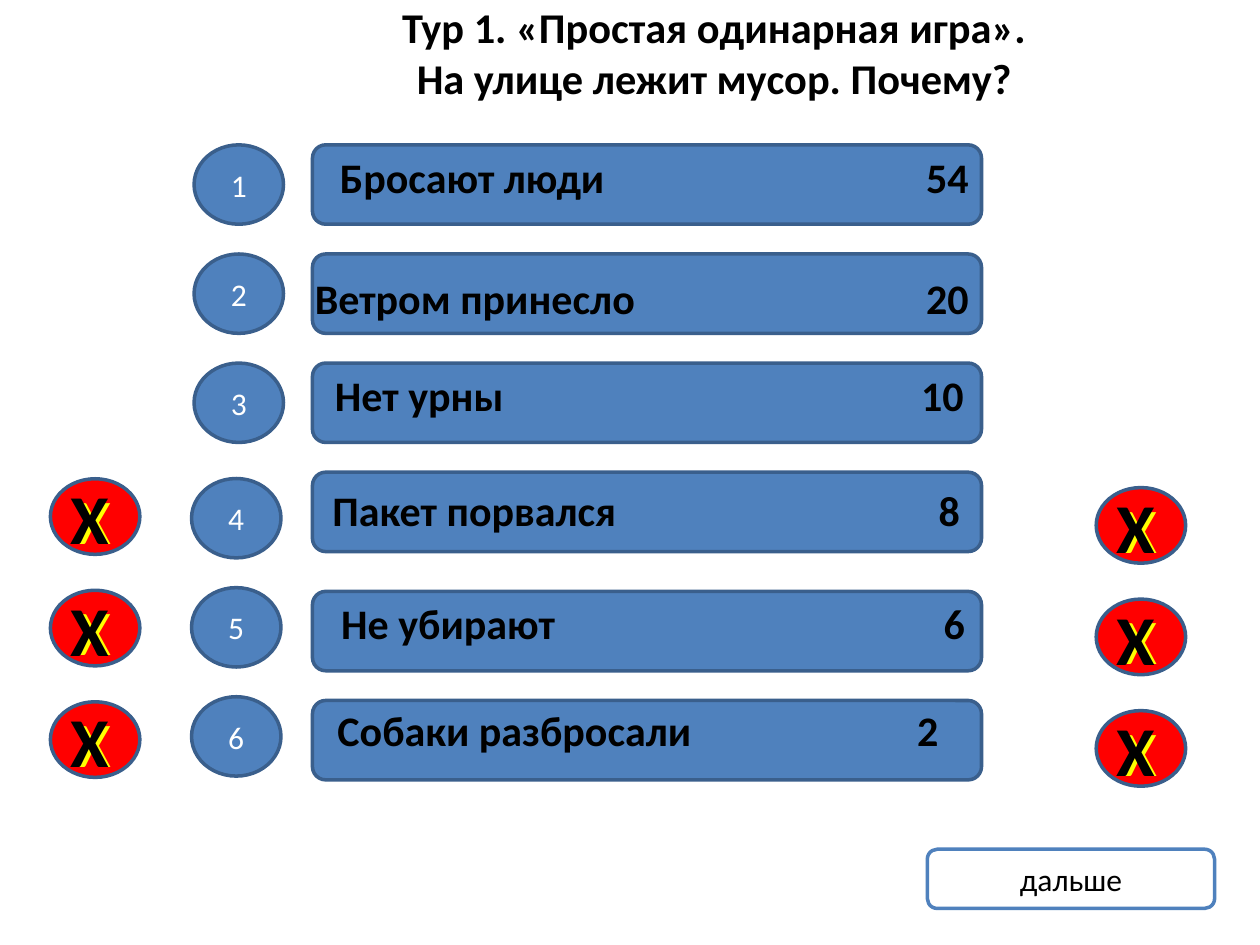
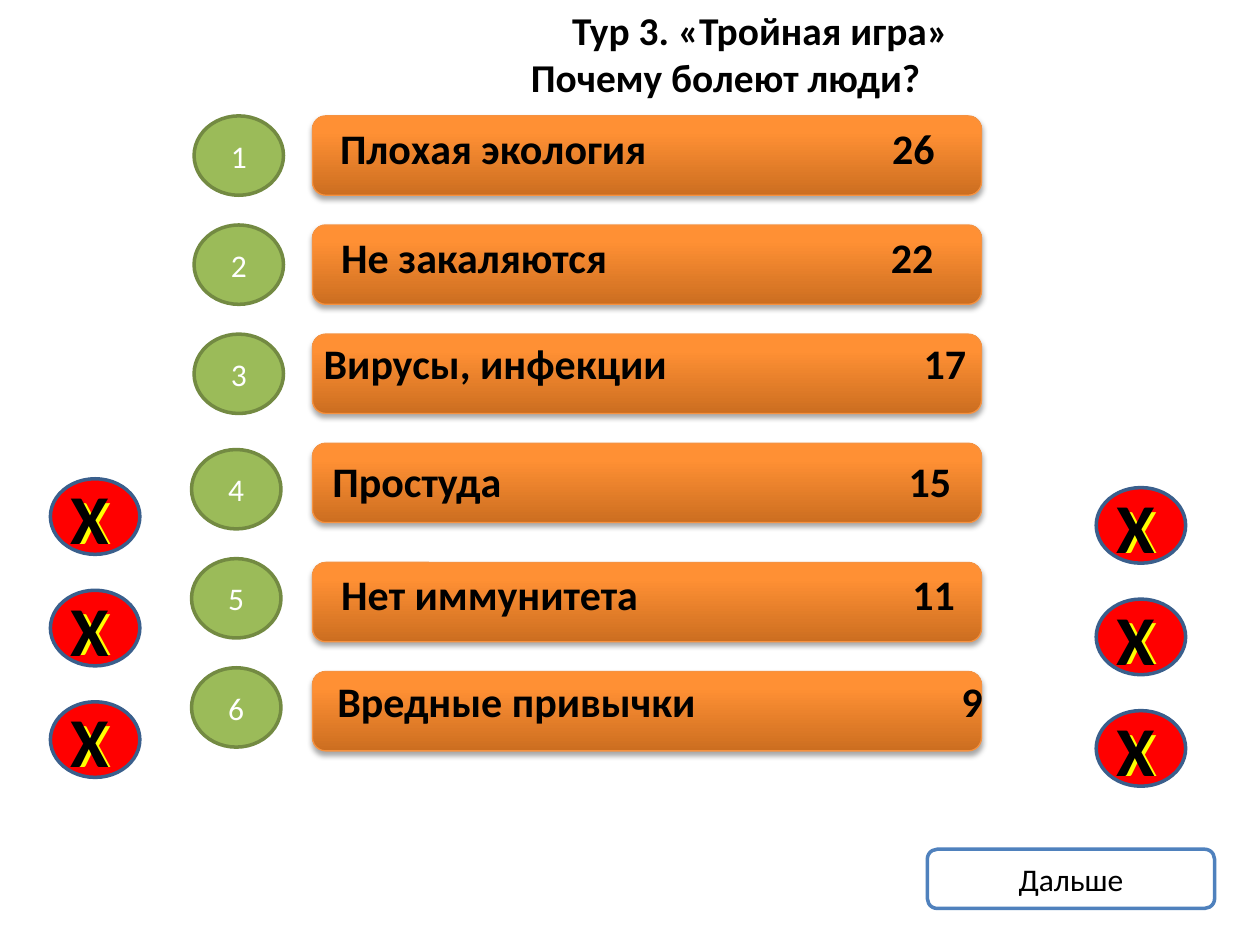
from copy import deepcopy
from dataclasses import dataclass

from lxml.etree import SubElement
from pptx import Presentation
from pptx.dml.color import RGBColor
from pptx.enum.shapes import MSO_SHAPE as Preset
from pptx.enum.text import MSO_ANCHOR as Anchor, PP_ALIGN as Align
from pptx.oxml.ns import qn
from pptx.util import Inches, Pt


@dataclass(frozen=True)
class Theme:
    font: str = "Calibri"
    black: str = "000000"
    white: str = "FFFFFF"
    blue: str = "4F81BD"
    blue_edge: str = "3A5F8C"
    green: str = "9BBB59"
    green_edge: str = "738A42"
    orange_edge: str = "F69240"
    orange_stops: tuple = ((0, "CC6E20"), (0.8, "FF9034"), (1, "FF9136"))
    red: str = "FF0000"
    yellow: str = "FFFF00"
    answer_size: float = 24
    label_size: float = 18
    cross_sizes: tuple = (36, 40)
    edge_width: float = 2
    thin_edge: float = 0.75


THEME = Theme()

# Each answer: wording, score, left of its box, drop below the bar top, right edge of the score
ROUNDS = [
    {
        "title": ["Тур 1. «Простая одинарная игра».", "На улице лежит мусор. Почему?"],
        "title_box": (1.53, 0, 8.28, 0.83),
        "title_size": 24.2,
        "title_indent": 0,
        "board_top": 1.15,
        "bar": (THEME.blue, THEME.blue_edge, THEME.edge_width),
        "number": (THEME.blue, THEME.blue_edge),
        "answers": [
            ("Бросают люди", 54, 2.6, 0, 7.69),
            ("Ветром принесло", 20, 2.4, 0.1, 7.69),
            ("Нет урны", 10, 2.56, 0, 7.65),
            ("Пакет порвался", 8, 2.54, 0.05, 7.62),
            ("Не убирают", 6, 2.61, 0, 7.66),
            ("Собаки разбросали", 2, 2.58, -0.02, 7.45),
        ],
        "next": "дальше",
    },
    {
        "title": ["Тур 3. «Тройная игра»", "Почему болеют люди?"],
        "title_box": (1.69, 0.08, 8.14, 0.68),
        "title_size": 22.5,
        "title_indent": 0.55,
        "board_top": 0.92,
        "bar": (THEME.orange_stops, THEME.orange_edge, THEME.thin_edge),
        "number": (THEME.green, THEME.green_edge),
        "answers": [
            ("Плохая экология", 26, 2.6, 0, 7.42),
            ("Не закаляются", 22, 2.61, 0, 7.41),
            ("Вирусы, инфекции", 17, 2.47, -0.02, 7.67),
            ("Простуда", 15, 2.54, 0.05, 7.55),
            ("Нет иммунитета", 11, 2.61, 0, 7.58),
            ("Вредные привычки", 9, 2.58, -0.02, 7.8),
        ],
        "next": "Дальше",
    },
]

ROW_PITCH = 0.866
ROW_HEIGHT = 0.63
BAR_LEFT, BAR_WIDTH = 2.48, 5.31
NUMBER_WIDTH = 0.71
INSET = 0.1
CROSS_PITCH = 0.885
CROSS_COUNT = 3
CROSS_STARTS = [(0.4, 3.8), (8.7, 3.87)]
NEXT_BOX = (7.36, 6.74, 2.28, 0.47)


def fill_gradient(shape, stops):
    """Fill upwards with the given (position, colour) stops."""
    shape.fill.gradient()
    shape.fill.gradient_angle = 90
    stop_list = shape.element.spPr.find(".//" + qn("a:gsLst"))
    while len(stop_list) < len(stops):
        stop_list.append(deepcopy(stop_list[0]))
    for stop, (position, colour) in zip(shape.fill.gradient_stops, stops):
        stop.position = position
        stop.color.rgb = RGBColor.from_string(colour)


def add_drop_shadow(shape):
    effects = shape.element.spPr.find(qn("a:effectLst"))
    shadow = SubElement(effects, qn("a:outerShdw"), blurRad=str(Pt(3.1)),
                        dist=str(Pt(1.8)), dir="5400000", rotWithShape="0")
    colour = SubElement(shadow, qn("a:srgbClr"), val=THEME.black)
    SubElement(colour, qn("a:alpha"), val="35000")


def add_panel(page, preset, box, fill, edge, edge_width=THEME.edge_width):
    shape = page.shapes.add_shape(preset, *map(Inches, box))
    shape.shadow.inherit = False
    if isinstance(fill, str):
        shape.fill.solid()
        shape.fill.fore_color.rgb = RGBColor.from_string(fill)
    else:
        fill_gradient(shape, fill)
        add_drop_shadow(shape)
    shape.line.color.rgb = RGBColor.from_string(edge)
    shape.line.width = Pt(edge_width)
    return shape


def write(shape, text, size, colour=THEME.black, bold=False,
          align=Align.CENTER, anchor=Anchor.MIDDLE):
    frame = shape.text_frame
    frame.text = text
    frame.word_wrap = True
    frame.vertical_anchor = anchor
    for para in frame.paragraphs:
        para.alignment = align
        for span in para.runs:
            span.font.name = THEME.font
            span.font.size = Pt(size)
            span.font.bold = bold
            span.font.color.rgb = RGBColor.from_string(colour)
    return frame


def add_text(page, box, text, size, **style):
    return write(page.shapes.add_textbox(*map(Inches, box)), text, size, bold=True, **style)


def add_title(page, game):
    frame = add_text(page, game["title_box"], "\n".join(game["title"]), game["title_size"])
    properties = frame.paragraphs[0]._p.get_or_add_pPr()
    properties.set("marL", str(Inches(game["title_indent"])))


def add_answer(page, top, wording, score, left, drop, score_right):
    """Write the wording and push the score to a right-aligned tab stop."""
    width = max(score_right + 0.15, BAR_LEFT + BAR_WIDTH) - left
    frame = add_text(page, (left, top + drop, width, 0.5), f"{wording}\t{score}",
                     THEME.answer_size, align=Align.LEFT, anchor=Anchor.TOP)
    properties = frame.paragraphs[0]._p.get_or_add_pPr()
    tabs = SubElement(properties, qn("a:tabLst"))
    SubElement(tabs, qn("a:tab"), pos=str(Inches(score_right - left - INSET)), algn="r")


def add_board(page, game):
    for row, answer in enumerate(game["answers"]):
        lower_half = row >= 3
        top = game["board_top"] + row * ROW_PITCH
        bar_top = top + (0.08 if row >= 4 else 0)
        number_top = top + (0.05 if lower_half else 0)
        number_left = 1.52 if lower_half else 1.54
        add_panel(page, Preset.ROUNDED_RECTANGLE,
                  (BAR_LEFT, bar_top, BAR_WIDTH, ROW_HEIGHT), *game["bar"])
        number = add_panel(page, Preset.OVAL,
                           (number_left, number_top, NUMBER_WIDTH, ROW_HEIGHT), *game["number"])
        write(number, str(row + 1), THEME.label_size, THEME.white)
        add_answer(page, bar_top, *answer)


def add_crosses(page):
    small, large = THEME.cross_sizes
    style = {"align": Align.LEFT, "anchor": Anchor.TOP}
    for left, first_top in CROSS_STARTS:
        for index in range(CROSS_COUNT):
            top = first_top + index * CROSS_PITCH
            add_panel(page, Preset.OVAL, (left, top, 0.71, 0.6), THEME.red, THEME.blue_edge)
            add_text(page, (left + 0.11, top - 0.03, 0.5, 0.71), "Х", small,
                     colour=THEME.yellow, **style)
            add_text(page, (left + 0.06, top - 0.08, 0.5, 0.77), "Х", large, **style)


def main():
    deck = Presentation()
    deck.slide_width, deck.slide_height = Inches(10), Inches(7.5)
    for game in ROUNDS:
        page = deck.slides.add_slide(deck.slide_layouts[6])
        add_board(page, game)
        button = add_panel(page, Preset.ROUNDED_RECTANGLE, NEXT_BOX, THEME.white, THEME.blue)
        write(button, game["next"], THEME.label_size)
        add_title(page, game)
        add_crosses(page)
    deck.save("out.pptx")


if __name__ == "__main__":
    main()
